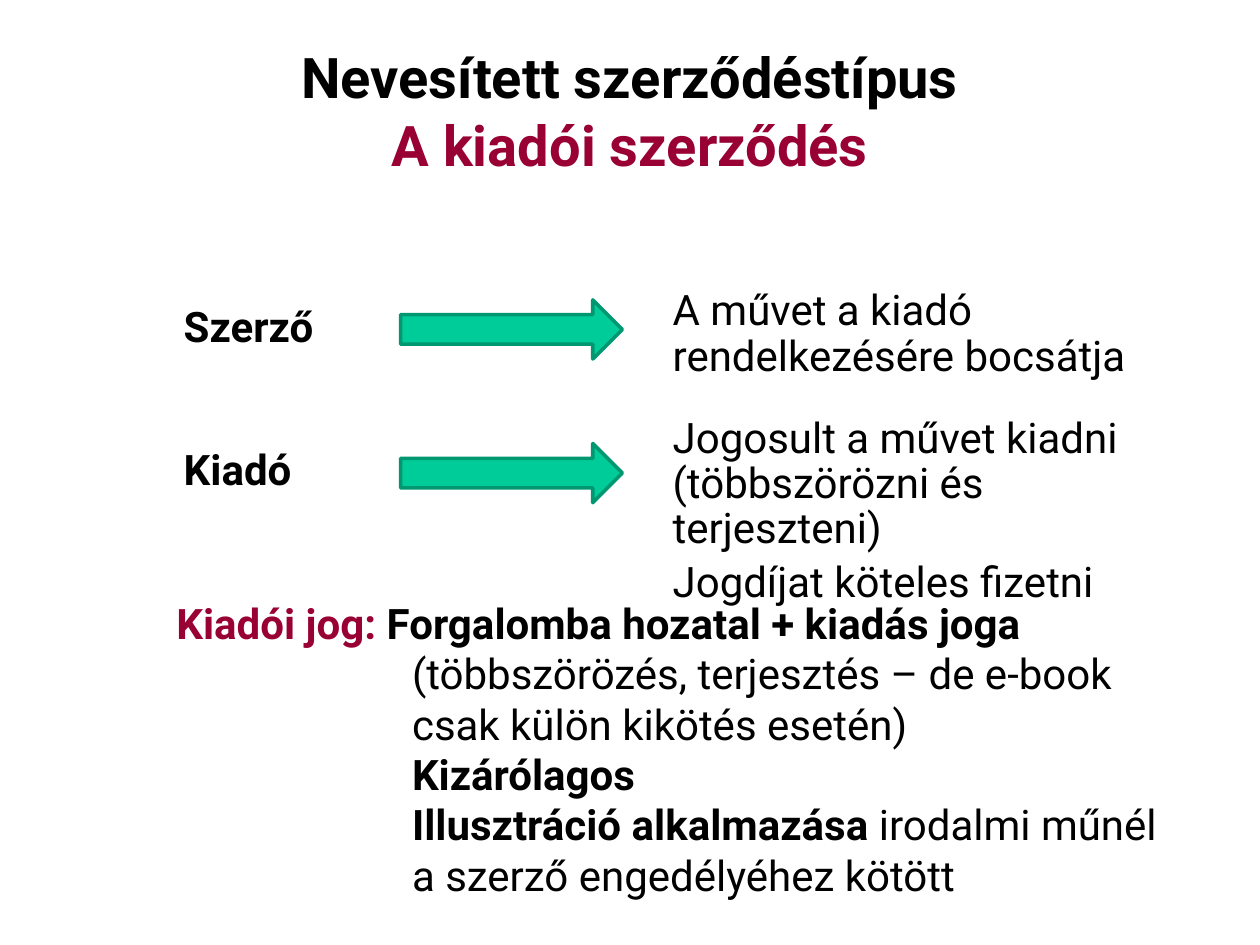
from lxml import etree
from pptx import Presentation
from pptx.dml.color import RGBColor
from pptx.enum.shapes import MSO_SHAPE
from pptx.enum.text import MSO_ANCHOR, MSO_AUTO_SIZE, PP_ALIGN
from pptx.oxml.ns import qn
from pptx.util import Inches, Pt

ARROW = MSO_SHAPE.RIGHT_ARROW
TOP = MSO_ANCHOR.TOP
NO_FIT = MSO_AUTO_SIZE.NONE
CENTER = PP_ALIGN.CENTER

BLACK = RGBColor(0x00, 0x00, 0x00)
RED = RGBColor(0x99, 0x00, 0x33)
GREEN = RGBColor(0x00, 0xCC, 0x99)
EDGE = RGBColor(0x00, 0x97, 0x71)
FONT = "Roboto"


def place(shape, left, top, width, height):
    """Move a shape and set its size in inches."""
    shape.left, shape.top = Inches(left), Inches(top)
    shape.width, shape.height = Inches(width), Inches(height)


def set_frame(shape):
    """Make the text wrap from the top and return its frame."""
    frame = shape.text_frame
    frame.word_wrap = True
    frame.auto_size = NO_FIT
    frame.vertical_anchor = TOP
    return frame


def next_par(frame, index):
    """Return the first paragraph or a new one."""
    return frame.add_paragraph() if index else frame.paragraphs[0]


def set_font(font, size, color, bold):
    """Set the look of a font."""
    font.name, font.size, font.bold = FONT, Pt(size), bold
    font.color.rgb = color


def indent(par, left, first=0):
    """Indent a paragraph without a bullet."""
    props = par._p.get_or_add_pPr()
    props.set("marL", str(Inches(left)))
    props.set("indent", str(Inches(first)))
    etree.SubElement(props, qn("a:buNone"))


def fill_title(shape, lines):
    """Write the centred title lines, each in its colour."""
    place(shape, 0.35, 0.29, 9.3, 2.04)
    frame = set_frame(shape)
    for index, (text, color) in enumerate(lines):
        par = next_par(frame, index)
        par.text = text
        par.alignment = CENTER
        set_font(par.font, 32, color, True)


def add_text(slide, box, lines, bold=False):
    """Add a box of indented lines."""
    frame = set_frame(slide.shapes.add_textbox(*map(Inches, box)))
    for index, text in enumerate(lines):
        par = next_par(frame, index)
        par.text = text
        indent(par, 0.79)
        par.line_spacing = 0.9
        par.space_before = Pt(4.8 if index else 0)
        set_font(par.font, 24, BLACK, bold)


def add_arrow(slide, top):
    """Add a green arrow from a party to its duties."""
    shape = slide.shapes.add_shape(
        ARROW, Inches(3.18), Inches(top), Inches(1.76), Inches(0.47))
    shape.shadow.inherit = False
    shape.fill.solid()
    shape.fill.fore_color.rgb = GREEN
    shape.line.color.rgb = EDGE
    shape.line.width = Pt(2)


def fill_body(shape, items):
    """Write the list of rights with a hanging indent."""
    place(shape, 1.3, 4.69, 8.03, 2.52)
    frame = set_frame(shape)
    for index, runs in enumerate(items):
        par = next_par(frame, index)
        indent(par, 1.87, -1.87)
        par.space_before = Pt(0)
        set_font(par.font, 24, BLACK, False)
        for text, color, bold in runs:
            run = par.add_run()
            run.text = text
            run.font.bold = bold
            run.font.color.rgb = color


def main():
    """Build the slide and save it."""
    deck = Presentation()
    deck.slide_width, deck.slide_height = Inches(10), Inches(7.5)
    slide = deck.slides.add_slide(deck.slide_layouts[1])
    fill_title(slide.shapes.title, [
        ("Nevesített szerződéstípus", BLACK),
        ("A kiadói szerződés", RED),
    ])
    rows = [
        ("Szerző", 2.38, 2.25, ["A művet a kiadó rendelkezésére bocsátja"]),
        ("Kiadó", 3.52, 3.26, [
            "Jogosult a művet kiadni (többszörözni és terjeszteni)",
            "Jogdíjat köteles fizetni",
        ]),
    ]
    for party, top, text_top, duties in rows:
        add_text(slide, (0.57, top, 2.46, 0.7), [party], True)
        add_arrow(slide, top)
        add_text(slide, (4.45, text_top, 5.15, 1.26), duties)
    fill_body(slide.placeholders[1], [
        [
            ("Kiadói jog: ", RED, True),
            ("Forgalomba hozatal + kiadás joga ", BLACK, True),
            ("(többszörözés, terjesztés – de e-book csak külön kikötés esetén)",
             BLACK, False),
        ],
        [("\tKizárólagos", BLACK, True)],
        [
            ("\tIllusztráció alkalmazása ", BLACK, True),
            ("irodalmi műnél a szerző engedélyéhez kötött", BLACK, False),
        ],
    ])
    deck.save("out.pptx")


if __name__ == "__main__":
    main()
